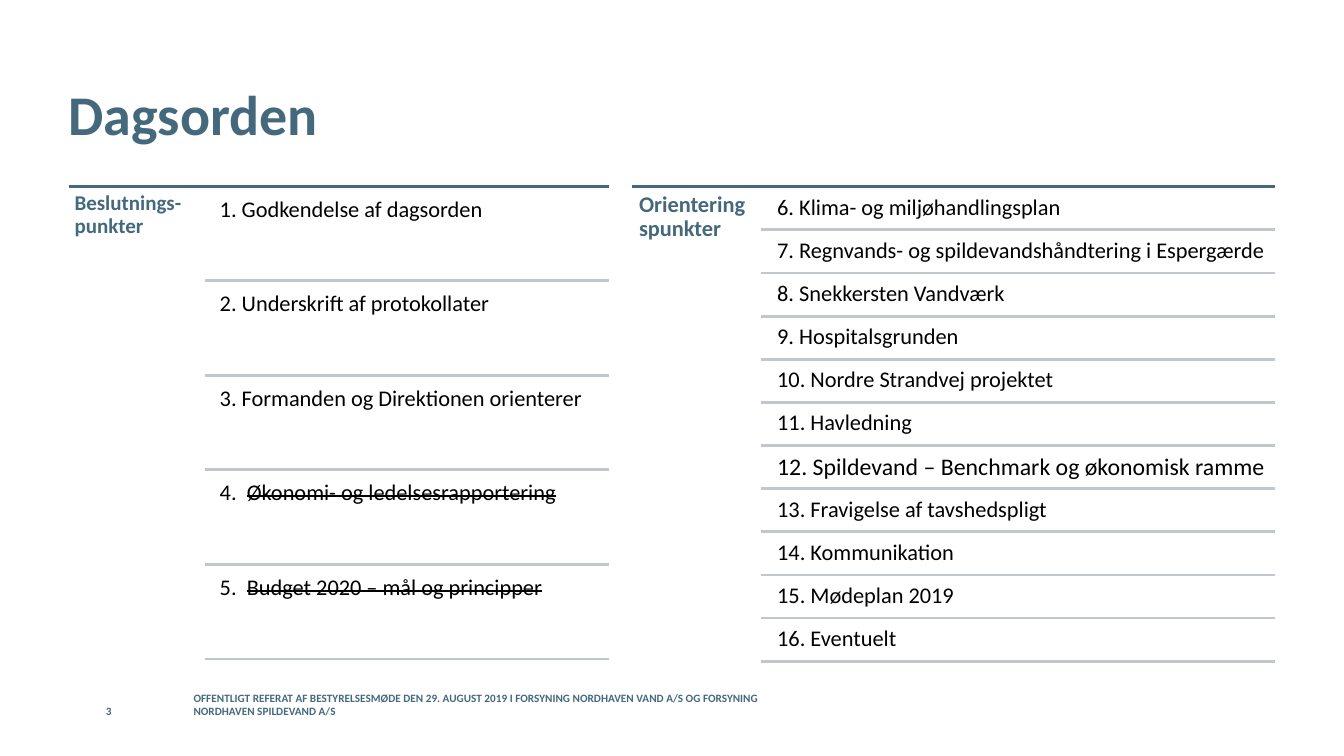
from dataclasses import dataclass
from typing import Any

from lxml import etree
from pptx import Presentation
from pptx import util as u
from pptx.dml import color
from pptx.enum import shapes, text
from pptx.oxml import ns


@dataclass(frozen=True)
class Theme:
    font: str = "Calibri"
    accent: str = "44697D"
    rule: str = "C1C7CC"
    ink: str = "000000"
    title: float = 40
    body: float = 16
    small: float = 8
    rule_width: float = 2


@dataclass(frozen=True)
class Span:
    words: str
    size: float
    colour: str
    bold: bool = False
    struck: bool = False


@dataclass(frozen=True)
class Item:
    words: str
    struck: str = ""
    size: float = 16


@dataclass(frozen=True)
class Section:
    label: str
    label_size: float
    label_inset: float
    left: float
    label_width: float
    right: float
    first_rule: float
    pitch: float
    row_height: float
    item_indent: float
    items: tuple[Item, ...]


THEME = Theme()
SECTION_TOP = 133.2
LABEL_HEIGHT = 341
ITEM_INSET = 5.04

SECTIONS = (
    Section("Beslutnings-punkter", 15, 4.32, 48.96, 97.2, 434.9,
            200.4, 67.6, 64.2, 5.76, (
                Item("1. Godkendelse af dagsorden"),
                Item("2. Underskrift af protokollater"),
                Item("3. Formanden og Direktionen orienterer"),
                Item("4.  ", "Økonomi- og ledelsesrapportering"),
                Item("5.  ", "Budget 2020 – mål og principper"))),
    Section("Orienteringspunkter", 16, 5.04, 451.44, 92.16, 910.8,
            164.2, 30.81, 29.4, 6.48, (
                Item("6. Klima- og miljøhandlingsplan"),
                Item("7. Regnvands- og spildevandshåndtering i Espergærde"),
                Item("8. Snekkersten Vandværk"),
                Item("9. Hospitalsgrunden"),
                Item("10. Nordre Strandvej projektet"),
                Item("11. Havledning"),
                Item("12. Spildevand – Benchmark og økonomisk ramme", size=17),
                Item("13. Fravigelse af tavshedspligt"),
                Item("14. Kommunikation"),
                Item("15. Mødeplan 2019"),
                Item("16. Eventuelt"))),
)


def add_text(target: Any, left: float, top: float, width: float, height: float,
             spans: list[Span], inset: float = 0, spacing: float = 1.0,
             anchor: Any = text.MSO_ANCHOR.TOP) -> None:
    box = target.add_textbox(u.Pt(left), u.Pt(top), u.Pt(width), u.Pt(height))
    frame = box.text_frame
    frame_format = {"word_wrap": True, "vertical_anchor": anchor}
    for side in ("left", "top", "right", "bottom"):
        frame_format[f"margin_{side}"] = u.Pt(inset)
    for name, value in frame_format.items():
        setattr(frame, name, value)
    para = frame.paragraphs[0]
    para.line_spacing = spacing
    for part in spans:
        span = para.add_run()
        span.text = part.words
        font_format = {"name": THEME.font, "size": u.Pt(part.size), "bold": part.bold}
        for name, value in font_format.items():
            setattr(span.font, name, value)
        span.font.color.rgb = color.RGBColor.from_string(part.colour)
        if part.struck:
            span._r.get_or_add_rPr().set("strike", "sngStrike")


def add_rule(target: Any, left: float, right: float, y: float, colour: str) -> None:
    rule = target.add_connector(shapes.MSO_CONNECTOR.STRAIGHT,
                                u.Pt(left), u.Pt(y), u.Pt(right), u.Pt(y))
    rule.line.color.rgb = color.RGBColor.from_string(colour)
    rule.line.width = u.Pt(THEME.rule_width)
    etree.SubElement(rule._element.spPr, ns.qn("a:effectLst"))


def add_section(page: Any, section: Section) -> None:
    group = page.shapes.add_group_shape().shapes
    # Heading rule and label
    add_rule(group, section.left, section.right, SECTION_TOP, THEME.accent)
    add_text(group, section.left, SECTION_TOP, section.label_width, LABEL_HEIGHT,
             [Span(section.label, section.label_size, THEME.accent, bold=True)],
             section.label_inset, 0.9)
    # Agenda items, each closed by a rule
    rule_left = section.left + section.label_width
    item_left = rule_left + section.item_indent
    for row, item in enumerate(section.items):
        y = section.first_rule + row * section.pitch
        spans = [Span(item.words, item.size, THEME.ink)]
        if item.struck:
            spans.append(Span(item.struck, item.size, THEME.ink, struck=True))
        add_text(group, item_left, y - section.row_height, section.right - item_left,
                 section.row_height, spans, ITEM_INSET, 0.9)
        add_rule(group, rule_left, section.right, y, THEME.rule)


def main() -> None:
    deck = Presentation()
    deck.slide_width, deck.slide_height = u.Pt(960), u.Pt(540)
    page = deck.slides.add_slide(deck.slide_layouts[6])

    # Title
    add_text(page.shapes, 48.96, 28.8, 828, 104.4,
             [Span("Dagsorden", THEME.title, THEME.accent, bold=True)],
             anchor=text.MSO_ANCHOR.MIDDLE)

    # Agenda columns
    for section in SECTIONS:
        add_section(page, section)

    # Footer and page number
    footer = ("OFFENTLIGT REFERAT AF BESTYRELSESMØDE DEN 29. AUGUST 2019 I FORSYNING "
              "NORDHAVEN VAND A/S OG FORSYNING NORDHAVEN SPILDEVAND A/S")
    for left, width, words in ((138.24, 408.24, footer), (75.6, 48.96, "3")):
        add_text(page.shapes, left, 498.96, width, 13.68,
                 [Span(words, THEME.small, THEME.accent, bold=True)],
                 anchor=text.MSO_ANCHOR.BOTTOM)

    deck.save("out.pptx")


if __name__ == "__main__":
    main()
